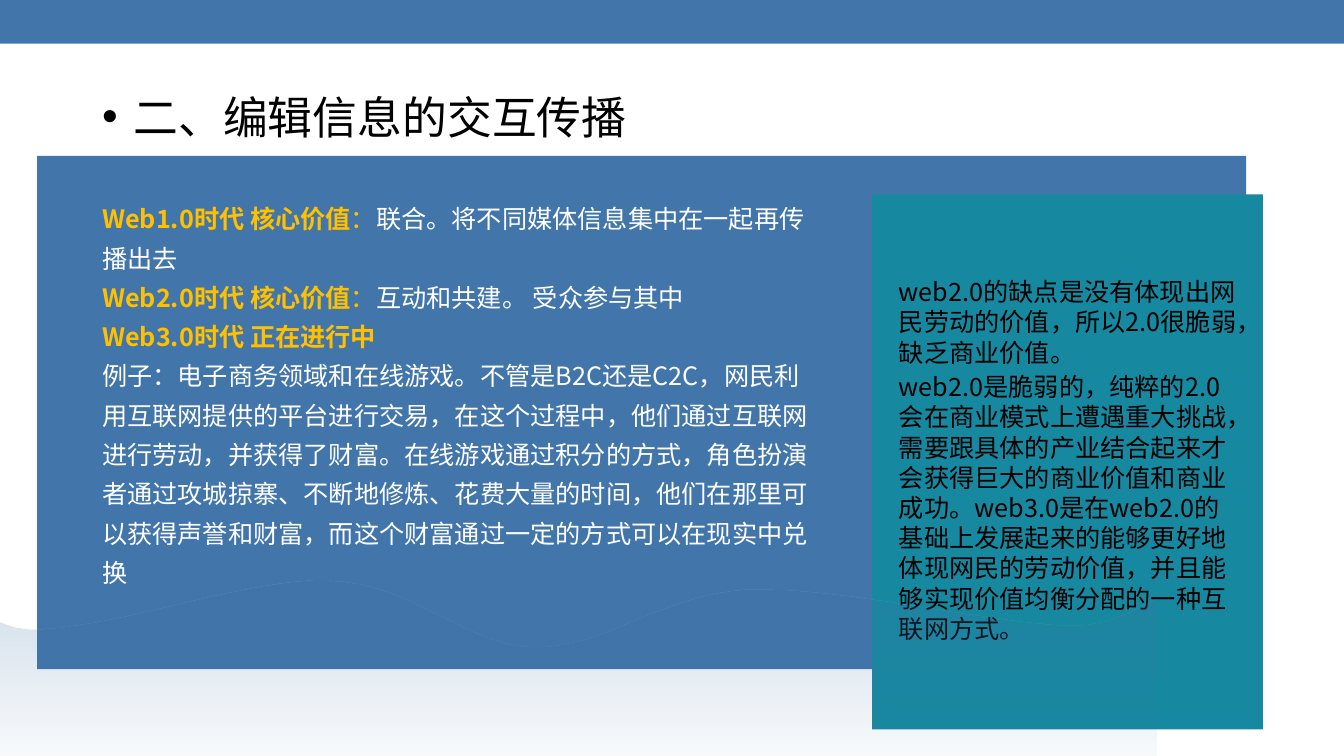
from lxml.etree import Element, SubElement
from pptx import Presentation
from pptx.dml.color import RGBColor
from pptx.enum.shapes import MSO_SHAPE
from pptx.enum.text import MSO_ANCHOR, MSO_AUTO_SIZE, PP_ALIGN
from pptx.oxml.ns import qn
from pptx.util import Pt

THEME = {
    "font": "Noto Sans CJK JP",
    "heading_size": 32, "body_size": 18,
    "blue": "4276AA", "teal": "1689A0", "gold": "FFC000",
    "white": "FFFFFF", "black": "000000",
}

HEADING = "二、编辑信息的交互传播"
# Each run is (text, colour, bold).
ERAS = [
    [("Web1.0时代 核心价值", "gold", True), ("：", "gold", False),
     ("联合。将不同媒体信息集中在一起再传播出去", "white", False)],
    [("Web2.0时代 核心价值", "gold", True), ("：", "gold", False),
     ("互动和共建。 受众参与其中", "white", False)],
    [("Web3.0时代 正在进行中", "gold", True)],
    [("例子：电子商务领域和在线游戏。不管是B2C还是C2C，网民利用互联网提供的平台进行交易，"
      "在这个过程中，他们通过互联网进行劳动，并获得了财富。在线游戏通过积分的方式，"
      "角色扮演者通过攻城掠寨、不断地修炼、花费大量的时间，他们在那里可以获得声誉和财富，"
      "而这个财富通过一定的方式可以在现实中兑换", "white", False)],
]
WEAKNESSES = [
    [("web2.0的缺点是没有体现出网民劳动的价值，所以2.0很脆弱，缺乏商业价值。", "black", False)],
    [("web2.0是脆弱的，纯粹的2.0 会在商业模式上遭遇重大挑战，需要跟具体的产业结合起来才会获得"
      "巨大的商业价值和商业成功。web3.0是在web2.0的基础上发展起来的能够更好地体现网民的劳动价值，"
      "并且能够实现价值均衡分配的一种互联网方式。", "black", False)],
]

# left, top, width, height, colour
PANELS = [
    (0, 0, 960, 31.2, "blue"),
    (26.5, 111.4, 863.7, 366.5, "blue"),
    (623, 138.8, 279, 382.2, "teal"),
]
HEADING_BOX = (65.7, 41, 406.8, 65.5)
ERAS_BOX = (65.9, 135.4, 520.6, 319)
WEAKNESSES_BOX = (635, 193.9, 255.6, 272.2)

# One point ends a straight side; three points make a Bézier curve.
WAVE_START = (235.4, 414.7)
WAVE = [
    [(295.2, 416.9), (331.2, 460.8), (381.6, 462.2)],
    [(431.3, 463.7), (472.3, 424.1), (536.4, 421.2)],
    [(600.5, 419), (708.5, 445.7), (766.8, 447.1)],
    [(781.2, 447.1), (795.6, 442.8), (809.3, 436.3)],
    [(826.4, 427.7)], [(826.4, 562.3)], [(-7.2, 562.3)],
    [(-7.2, 440.6)], [(0, 444.2)],
    [(6.5, 447.1), (13.7, 448.6), (20.9, 449.3)],
    [(78.5, 451.4), (175, 412.6), WAVE_START],
]
WAVE_OPACITY = (25, 0)


def colour(name):
    return RGBColor.from_string(THEME[name])


def place(shape, box):
    shape.left, shape.top, shape.width, shape.height = map(Pt, box)


def write(shape, paragraphs, size, line_spacing=1.0, gap=0, bullet_indent=0):
    frame = shape.text_frame
    frame.word_wrap = True
    frame.auto_size = MSO_AUTO_SIZE.NONE
    frame.vertical_anchor = MSO_ANCHOR.TOP
    for index, runs in enumerate(paragraphs):
        paragraph = frame.add_paragraph() if index else frame.paragraphs[0]
        if bullet_indent:
            properties = paragraph._p.get_or_add_pPr()
            properties.set("marL", str(Pt(bullet_indent)))
            properties.set("indent", str(-Pt(bullet_indent)))
            SubElement(properties, qn("a:buFont")).set("typeface", "Arial")
            SubElement(properties, qn("a:buChar")).set("char", "•")
        paragraph.alignment = PP_ALIGN.LEFT
        paragraph.line_spacing = line_spacing
        paragraph.space_before = Pt(gap if index else 0)
        for text, ink, bold in runs:
            run = paragraph.add_run()
            run.text = text
            run.font.size = Pt(size)
            run.font.bold = bold
            run.font.color.rgb = colour(ink)
            run.font.name = THEME["font"]
            east_asian = SubElement(run._r.get_or_add_rPr(), qn("a:ea"))
            east_asian.set("typeface", THEME["font"])


def add_panel(slide, *box, fill):
    panel = slide.shapes.add_shape(MSO_SHAPE.RECTANGLE, *map(Pt, box))
    panel.shadow.inherit = False
    panel.fill.solid()
    panel.fill.fore_color.rgb = colour(fill)
    panel.line.fill.background()


def add_text(slide, box, paragraphs, **text_format):
    text_box = slide.shapes.add_textbox(*map(Pt, box))
    write(text_box, paragraphs, THEME["body_size"], **text_format)


def bend_sides(freeform, segments):
    """Turn the straight sides that have control points into Bézier curves."""
    sides = list(freeform._element.spPr.iter(qn("a:lnTo")))
    for side, segment in zip(sides, segments):
        if len(segment) == 3:
            curve = Element(qn("a:cubicBezTo"))
            for x, y in segment:
                point = SubElement(curve, qn("a:pt"))
                point.set("x", str(Pt(x) - freeform.left))
                point.set("y", str(Pt(y) - freeform.top))
            side.getparent().replace(side, curve)


def add_wave(slide):
    builder = slide.shapes.build_freeform(*map(Pt, WAVE_START))
    ends = [tuple(map(Pt, segment[-1])) for segment in WAVE]
    builder.add_line_segments(ends, close=True)
    wave = builder.convert_to_shape()
    bend_sides(wave, WAVE)
    wave.shadow.inherit = False
    wave.line.fill.background()
    wave.fill.gradient()
    wave.fill.gradient_angle = 270
    for stop in wave.fill.gradient_stops:
        stop.color.rgb = colour("blue")
    for tint, opacity in zip(wave._element.spPr.iter(qn("a:srgbClr")), WAVE_OPACITY):
        SubElement(tint, qn("a:alpha")).set("val", str(opacity * 1000))


def main():
    presentation = Presentation()
    presentation.slide_width, presentation.slide_height = Pt(960), Pt(540)
    slide = presentation.slides.add_slide(presentation.slide_layouts[5])
    for *box, fill in PANELS:
        add_panel(slide, *box, fill=fill)
    heading = slide.shapes.title
    place(heading, HEADING_BOX)
    write(heading, [[(HEADING, "black", False)]], THEME["heading_size"],
          line_spacing=1.5, bullet_indent=22.5)
    add_text(slide, ERAS_BOX, ERAS, line_spacing=1.3)
    add_text(slide, WEAKNESSES_BOX, WEAKNESSES, gap=3)
    add_wave(slide)
    presentation.save("out.pptx")


if __name__ == "__main__":
    main()
